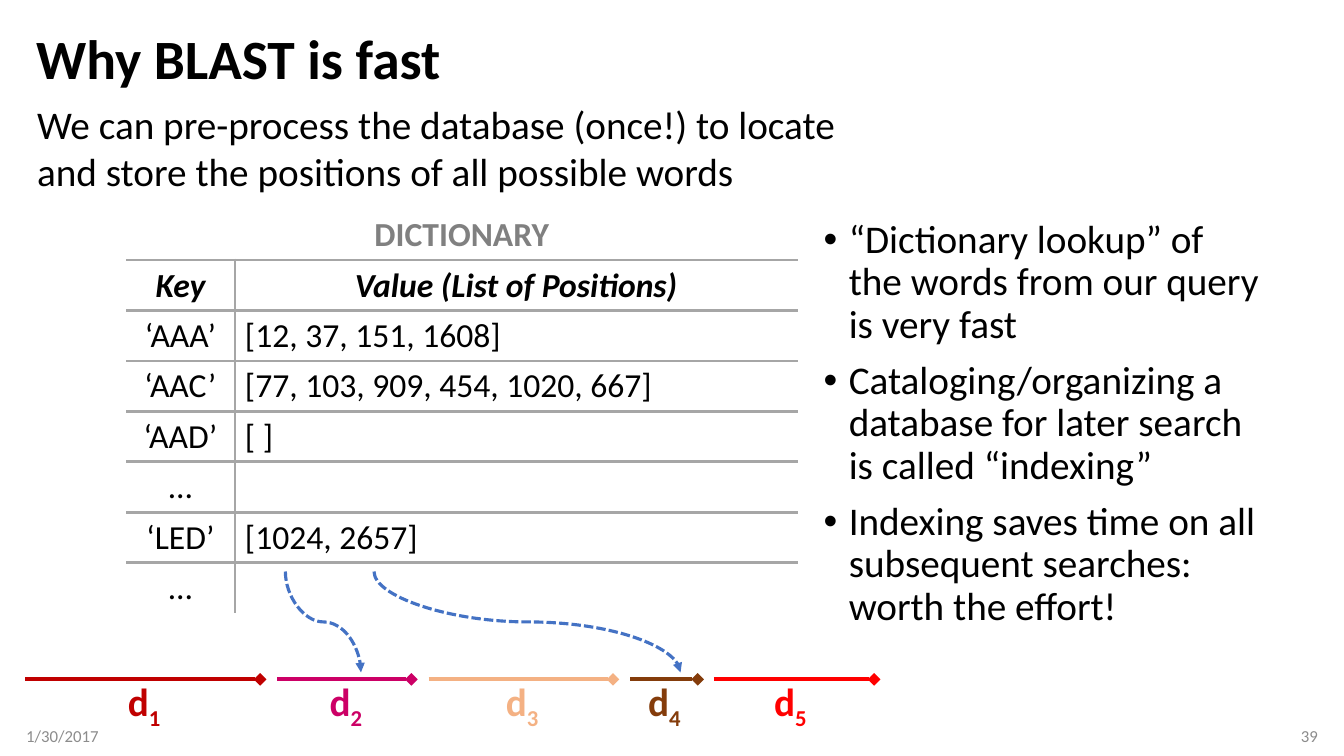
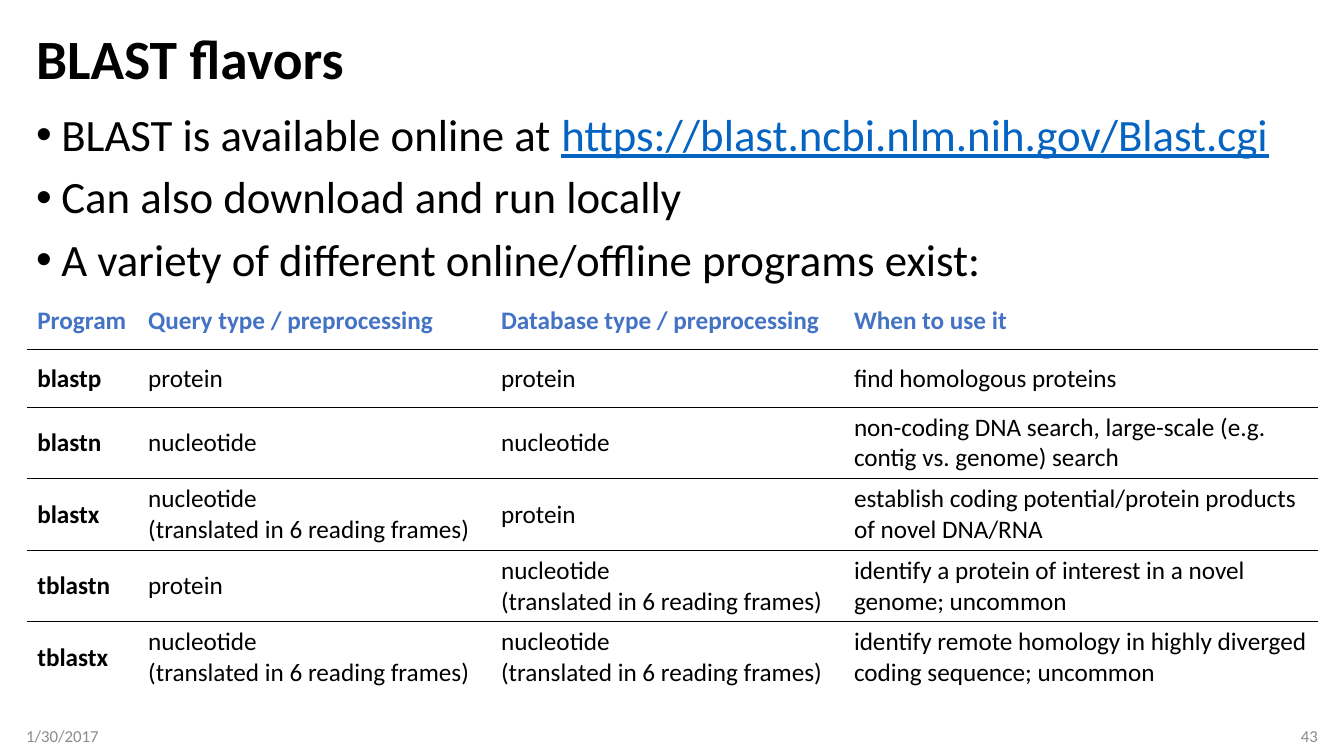
"""Build two slides on why BLAST is fast and which flavors of it exist."""
from lxml import etree
from pptx import Presentation, util as u
from pptx.dml.color import RGBColor
from pptx.enum import dml, shapes, text
from pptx.oxml.ns import qn

WIDTH, HEIGHT = 13.33, 7.5
FONT = "Calibri"
COLORS = {"ink": "000000", "footer": "8C8C8C", "caption": "808080", "rule": "A6A6A6",
          "accent": "4472C4", "link": "0563C1"}
LEFT, CENTER, RIGHT = text.PP_ALIGN.LEFT, text.PP_ALIGN.CENTER, text.PP_ALIGN.RIGHT
MARGIN = 0.26
FULL = WIDTH - 2 * MARGIN
DATE = "1/30/2017"

CLAIM = "We can pre-process the database (once!) to locate and store the positions of all possible words"
DICTIONARY = [
    ("DICTIONARY", ""),
    ("Key", "Value (List of Positions)"),
    ("‘AAA’", "[12, 37, 151, 1608]"),
    ("‘AAC’", "[77, 103, 909, 454, 1020, 667]"),
    ("‘AAD’", "[ ]"),
    ("…", ""),
    ("‘LED’", "[1024, 2657]"),
    ("…", ""),
]
BENEFITS = [
    "“Dictionary lookup” of the words from our query is very fast",
    "Cataloging/organizing a database for later search is called “indexing”",
    "Indexing saves time on all subsequent searches: worth the effort!",
]
SEQUENCES = [
    (0.25, 2.58, 1.17, "C00000"),
    (2.75, 4.08, 3.17, "CC0066"),
    (4.25, 6.08, 4.92, "F4B183"),
    (6.25, 6.92, 6.33, "843C0B"),
    (7.08, 8.67, 7.58, "FF0000"),
]
SEQUENCE_Y = 6.74
LOOKUPS = [(2.83, 3.58), (3.71, 6.75)]
LOOKUP_TOP, LOOKUP_BOTTOM = 5.67, 6.67

AVAILABILITY = [
    [("BLAST is available online at ", {}),
     ("https://blast.ncbi.nlm.nih.gov/Blast.cgi", {"color": COLORS["link"], "underline": True})],
    "Can also download and run locally",
    "A variety of different online/offline programs exist:",
]
TRANSLATED = "nucleotide\n(translated in 6 reading frames)"
PROGRAMS = [
    ("Program", "Query type / preprocessing", "Database type / preprocessing", "When to use it"),
    ("blastp", "protein", "protein", "find homologous proteins"),
    ("blastn", "nucleotide", "nucleotide",
     "non-coding DNA search, large-scale (e.g. contig vs. genome) search"),
    ("blastx", TRANSLATED, "protein", "establish coding potential/protein products of novel DNA/RNA"),
    ("tblastn", "protein", TRANSLATED, "identify a protein of interest in a novel genome; uncommon"),
    ("tblastx", TRANSLATED, TRANSLATED,
     "identify remote homology in highly diverged coding sequence; uncommon"),
]


def write(frame, paragraphs, size=28, color=COLORS["ink"], bold=False, italic=False,
          align=LEFT, spacing=None, bullet=False):
    """Fill a text frame with paragraphs, each a string or a list of (text, overrides)."""
    for index, content in enumerate(paragraphs):
        paragraph = frame.paragraphs[0] if index == 0 else frame.add_paragraph()
        paragraph.alignment = align
        if spacing:
            paragraph.line_spacing = spacing
        if bullet:
            paragraph.space_before = u.Pt(10)
            props = paragraph._p.get_or_add_pPr()
            props.set("marL", str(u.Inches(0.25)))
            props.set("indent", str(-u.Inches(0.25)))
            etree.SubElement(props, qn("a:buFont")).set("typeface", "Arial")
            etree.SubElement(props, qn("a:buChar")).set("char", "•")
        for words, changes in [(content, {})] if isinstance(content, str) else content:
            run = paragraph.add_run()
            run.text = words
            font = run.font
            font.name, font.size, font.bold, font.italic = FONT, u.Pt(size), bold, italic
            font.underline = changes.get("underline", False)
            font.color.rgb = RGBColor.from_string(changes.get("color", color))
            if "baseline" in changes:
                font._element.set("baseline", str(changes["baseline"]))


def add_text(slide, box, paragraphs, anchor=text.MSO_ANCHOR.TOP, insets=(0.1, 0.1), **style):
    """Add a wrapped text box."""
    frame = slide.shapes.add_textbox(*map(u.Inches, box)).text_frame
    frame.word_wrap = True
    frame.vertical_anchor = anchor
    frame.margin_left, frame.margin_right = map(u.Inches, insets)
    write(frame, paragraphs, **style)


def add_line(slide, kind, start, end, color, width, tail):
    """Add a connector that ends in the given arrowhead."""
    line = slide.shapes.add_connector(kind, *map(u.Inches, (*start, *end)))
    line.line.color.rgb = RGBColor.from_string(color)
    line.line.width = u.Pt(width)
    etree.SubElement(line.line._get_or_add_ln(), qn("a:tailEnd")).set("type", tail)
    etree.SubElement(line._element.spPr, qn("a:effectLst"))
    return line


def add_lookup(slide, x1, x2):
    """Add a dashed curve that leaves and arrives vertically."""
    rise, run = LOOKUP_BOTTOM - LOOKUP_TOP, x2 - x1
    left = (x1 + x2 - rise) / 2
    top = (LOOKUP_TOP + LOOKUP_BOTTOM - run) / 2
    curve = add_line(slide, shapes.MSO_CONNECTOR.CURVE, (left + rise, top), (left, top + run),
                     COLORS["accent"], 2.25, "triangle")
    curve.line.dash_style = dml.MSO_LINE.SQUARE_DOT
    curve._element.spPr.find(qn("a:xfrm")).set("rot", str(270 * 60000))


def set_borders(cell, sides, color, width):
    """Draw the given sides of a cell and clear the others."""
    props = cell._tc.get_or_add_tcPr()
    for side in "LRTB":
        edge = etree.SubElement(props, qn("a:ln" + side))
        edge.set("w", str(u.Pt(width)))
        if side in sides:
            fill = etree.SubElement(edge, qn("a:solidFill"))
            etree.SubElement(fill, qn("a:srgbClr")).set("val", color)
        else:
            etree.SubElement(edge, qn("a:noFill"))
    cell.fill.background()


def add_grid(slide, corner, columns, heights, rows, style_of, rule, divider=False,
             anchor=text.MSO_ANCHOR.TOP):
    """Add a table with inner horizontal rules and an optional rule beside the first column."""
    table = slide.shapes.add_table(len(rows), len(columns), *map(
        u.Inches, (*corner, sum(columns), sum(heights)))).table
    table.first_row = table.horz_banding = False
    for column, width in zip(table.columns, columns):
        column.width = u.Inches(width)
    for r, (row, height) in enumerate(zip(rows, heights)):
        table.rows[r].height = u.Inches(height)
        for c, words in enumerate(row):
            cell = table.cell(r, c)
            cell.vertical_anchor = anchor
            sides = "T" * (r > 0) + "B" * (r < len(rows) - 1)
            if divider and r:
                sides += "L" if c else "R"
            set_borders(cell, sides, *rule)
            if words:
                write(cell.text_frame, words.split("\n"), **style_of(r, c))
    return table


def dictionary_style(r, c):
    """Format the caption, the header and the entries of the dictionary."""
    return {"size": 24, "color": COLORS["ink" if r else "caption"], "bold": r < 2,
            "italic": r == 1, "align": LEFT if r > 1 and c else CENTER}


def program_style(r, c):
    """Format the header, the program names and their descriptions."""
    return {"size": 18, "color": COLORS["ink" if r else "accent"], "bold": r == 0 or c == 0}


def start_slide(deck, title, number):
    """Add a blank slide with title, date and number."""
    slide = deck.slides.add_slide(deck.slide_layouts[6])
    middle = text.MSO_ANCHOR.MIDDLE
    add_text(slide, (MARGIN, 0.25, FULL, 0.72), [title], middle, size=39.6, bold=True, spacing=0.9)
    footer = {"anchor": middle, "size": 12, "color": COLORS["footer"]}
    add_text(slide, (MARGIN, 7.1, 3, 0.4), [DATE], insets=(0, 0.1), **footer)
    add_text(slide, (WIDTH - MARGIN - 3, 7.1, 3, 0.4), [str(number)], insets=(0.1, 0),
             align=RIGHT, **footer)
    return slide


def build_speed(deck):
    """Show the dictionary and where its positions point."""
    slide = start_slide(deck, "Why BLAST is fast", 39)
    add_text(slide, (0.27, 0.95, 8.5, 1.04), [CLAIM])
    table = add_grid(slide, (1.25, 2.08), (1.08, 5.58), [0.5] * len(DICTIONARY), DICTIONARY,
                     dictionary_style, (COLORS["rule"], 2.25), divider=True)
    table.cell(0, 0).merge(table.cell(0, 1))
    for number, (start, end, label, color) in enumerate(SEQUENCES, 1):
        add_line(slide, shapes.MSO_CONNECTOR.STRAIGHT, (start, SEQUENCE_Y), (end, SEQUENCE_Y),
                 color, 3, "diamond")
        add_text(slide, (label, 6.67, 0.7, 0.57),
                 [[("d", {}), (str(number), {"baseline": -25000})]], color=color, bold=True)
    for x1, x2 in LOOKUPS:
        add_lookup(slide, x1, x2)
    add_text(slide, (8.07, 2.13, 4.56, 4.32), BENEFITS, spacing=0.9, bullet=True)


def build_flavors(deck):
    """List the BLAST programs."""
    slide = start_slide(deck, "BLAST flavors", 43)
    heights = [0.57] * 2 + [0.71] * 4
    add_grid(slide, (0.27, 2.9), (1.1, 3.5, 3.5, 4.7), heights, PROGRAMS, program_style,
             (COLORS["ink"], 1), anchor=text.MSO_ANCHOR.MIDDLE)
    add_text(slide, (MARGIN, 1.07, FULL, 5.91), AVAILABILITY, size=32, spacing=0.9, bullet=True)


def main():
    """Build and save the deck."""
    deck = Presentation()
    deck.slide_width, deck.slide_height = u.Inches(WIDTH), u.Inches(HEIGHT)
    build_speed(deck)
    build_flavors(deck)
    deck.save("out.pptx")


if __name__ == "__main__":
    main()
